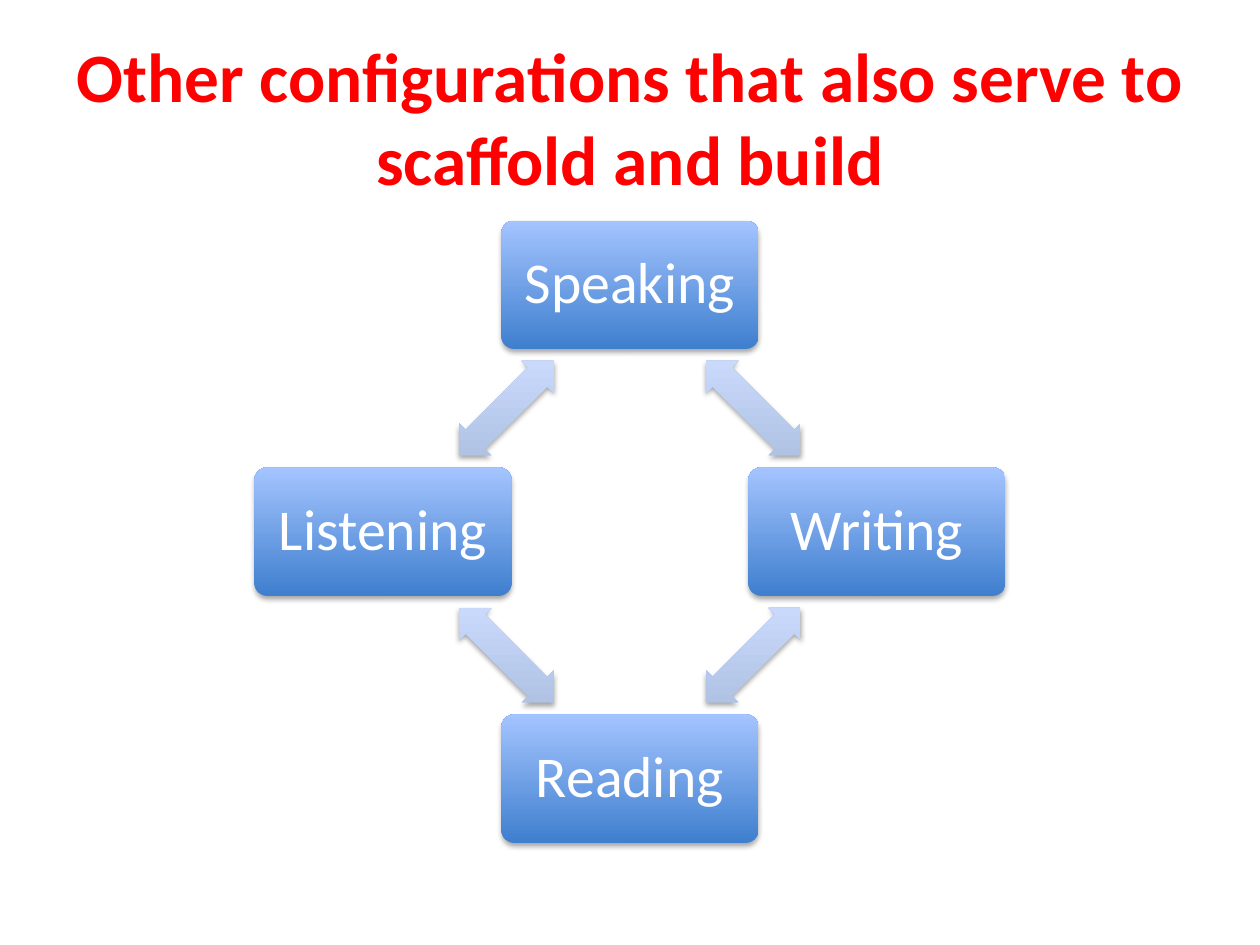
from dataclasses import dataclass
from math import cos, radians, sin

from lxml.etree import SubElement
from pptx import Presentation
from pptx.dml.color import RGBColor
from pptx.enum.shapes import MSO_SHAPE
from pptx.enum.text import MSO_ANCHOR, MSO_AUTO_SIZE, PP_ALIGN
from pptx.oxml.ns import qn
from pptx.util import Inches, Pt


@dataclass(frozen=True)
class Theme:
    font: str = "Calibri"
    title_color: str = "FF0000"
    title_size: float = 39.6
    skill_color: str = "FFFFFF"
    skill_size: float = 33
    skill_fill: tuple = ("3F7FCE", "A4C4FF")
    arrow_fill: tuple = ("ADBFE1", "CCDDFF")
    shadow_color: str = "000000"


THEME = Theme()
SKILLS = ("Speaking", "Writing", "Reading", "Listening")
CENTER_X, CENTER_Y, RADIUS = 5, 4.22, 1.96
SKILL_SIZE = (2.04, 1.02)
ARROW_SIZE = (1.06, 0.36)


def write_text(text_frame, text, size, color, bold=False):
    text_frame.text = text
    text_frame.word_wrap = True
    text_frame.auto_size = MSO_AUTO_SIZE.NONE
    text_frame.vertical_anchor = MSO_ANCHOR.MIDDLE
    para = text_frame.paragraphs[0]
    para.alignment = PP_ALIGN.CENTER
    font = para.runs[0].font
    font.name, font.size, font.bold = THEME.font, Pt(size), bold
    font.color.rgb = RGBColor.from_string(color)
    return para


def add_title(page, text):
    title = page.shapes.title
    title.left, title.top = Inches(0.5), Inches(0.3)
    title.width, title.height = Inches(9), Inches(1.25)
    write_text(title.text_frame, text, THEME.title_size, THEME.title_color, True)


def add_shadow(shape):
    shape.shadow.inherit = False
    effects = shape._element.spPr.find(qn("a:effectLst"))
    shadow = SubElement(effects, qn("a:outerShdw"), blurRad=str(Pt(3.1)),
                        dist=str(Pt(1.8)), dir="5400000", rotWithShape="0")
    color = SubElement(shadow, qn("a:srgbClr"), val=THEME.shadow_color)
    SubElement(color, qn("a:alpha"), val="35000")


def add_gradient_shape(page, kind, center, size, colors, adjustments):
    (x, y), (width, height) = center, size
    shape = page.shapes.add_shape(
        kind, Inches(x - width / 2), Inches(y - height / 2),
        Inches(width), Inches(height))
    for index, value in enumerate(adjustments):
        shape.adjustments[index] = value
    shape.fill.gradient()
    shape.fill.gradient_angle = 90
    for stop, color in zip(shape.fill.gradient_stops, colors):
        stop.color.rgb = RGBColor.from_string(color)
    shape._element.spPr.find(qn("a:gradFill")).set("rotWithShape", "0")
    shape.line.fill.background()
    add_shadow(shape)
    return shape


def add_skill(page, text, center):
    box = add_gradient_shape(page, MSO_SHAPE.ROUNDED_RECTANGLE, center,
                             SKILL_SIZE, THEME.skill_fill, [0.1])
    frame = box.text_frame
    frame.margin_left = frame.margin_right = Inches(0.14)
    frame.margin_top = frame.margin_bottom = Inches(0.14)
    para = write_text(frame, text, THEME.skill_size, THEME.skill_color)
    para.line_spacing = 0.9


def add_arrow(page, center, rotation):
    arrow = add_gradient_shape(page, MSO_SHAPE.LEFT_RIGHT_ARROW, center,
                               ARROW_SIZE, THEME.arrow_fill, [0.6, 0.5])
    arrow.rotation = rotation


def cycle_point(index):
    angle = radians(360 / len(SKILLS) * index - 90)
    return CENTER_X + RADIUS * cos(angle), CENTER_Y + RADIUS * sin(angle)


def add_cycle(page):
    for index, skill in enumerate(SKILLS):
        start, end = cycle_point(index), cycle_point(index + 1)
        middle = [(a + b) / 2 for a, b in zip(start, end)]
        add_skill(page, skill, start)
        add_arrow(page, middle, 45 + 90 * index)


def main():
    deck = Presentation()
    deck.slide_width, deck.slide_height = Inches(10), Inches(7.5)
    page = deck.slides.add_slide(deck.slide_layouts.get_by_name("Title Only"))
    add_title(page, "Other configurations that also serve to scaffold and build")
    add_cycle(page)
    deck.save("out.pptx")


if __name__ == "__main__":
    main()
